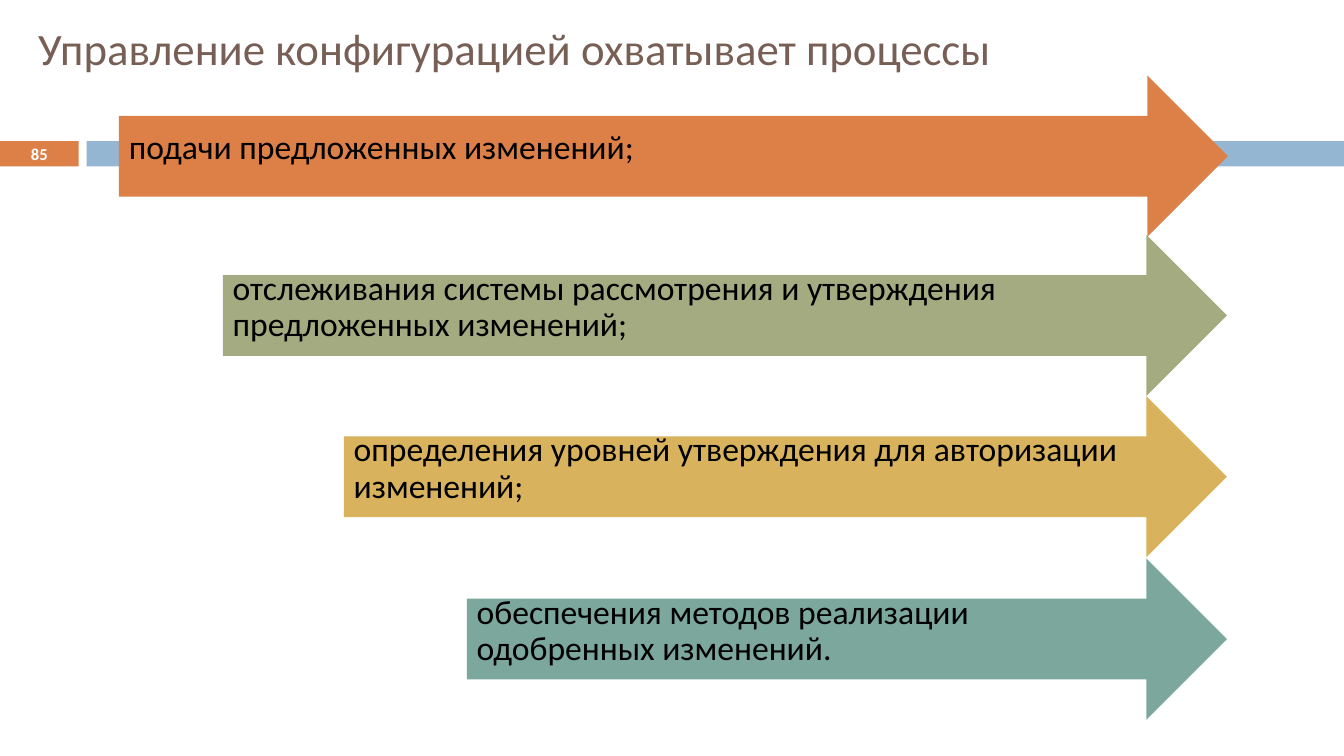
from pptx import Presentation
from pptx.dml.color import RGBColor
from pptx.enum import shapes, text
from pptx.util import Inches, Pt

COLORS = {
    "orange": "DD8047", "blue": "94B6D2", "green": "A5AB81", "gold": "D8B25C",
    "teal": "7BA79D", "title": "775F55", "black": "000000", "white": "FFFFFF",
}
TITLE = "Управление конфигурацией охватывает процессы"
PAGE_NUMBER = "85"
BARS = [(0, 0.78, "orange"), (0.86, 12.47, "blue")]
PROCESSES = [
    ("подачи предложенных изменений;", "orange", 1.18, 0.75, 11, 10.6),
    ("отслеживания системы рассмотрения и утверждения предложенных изменений;",
     "green", 2.21, 2.33, 9.96, 9.49),
    ("определения уровней утверждения для авторизации изменений;",
     "gold", 3.41, 3.93, 8.76, 8.17),
    ("обеспечения методов реализации одобренных изменений.",
     "teal", 4.63, 5.54, 7.54, 6.65),
]
ARROW_HEIGHT = 1.6
SHAFT_HEIGHT = ARROW_HEIGHT / 2
LABEL_INSETS = (0.1, 0.1, 0.28, 0.25)


def add_filled(slide, kind, box, color):
    shape = slide.shapes.add_shape(kind, *map(Inches, box))
    shape.shadow.inherit = False
    shape.fill.solid()
    shape.fill.fore_color.rgb = RGBColor.from_string(COLORS[color])
    shape.line.fill.background()
    return shape


def add_text(slide, content, box, size, color, bold=False,
             align=text.PP_ALIGN.LEFT, insets=(0.1, 0.05, 0.1, 0.05), spacing=1.0):
    frame = slide.shapes.add_textbox(*map(Inches, box)).text_frame
    frame.word_wrap = True
    frame.vertical_anchor = text.MSO_ANCHOR.MIDDLE
    (frame.margin_left, frame.margin_top,
     frame.margin_right, frame.margin_bottom) = map(Inches, insets)
    paragraph = frame.paragraphs[0]
    paragraph.text = content
    paragraph.alignment = align
    paragraph.line_spacing = spacing
    paragraph.font.name = "Calibri"
    paragraph.font.size = Pt(size)
    paragraph.font.bold = bold
    paragraph.font.color.rgb = RGBColor.from_string(COLORS[color])


def main():
    presentation = Presentation()
    presentation.slide_width = Inches(13.33)
    presentation.slide_height = Inches(7.5)
    slide = presentation.slides.add_slide(presentation.slide_layouts[6])

    for left, width, color in BARS:
        add_filled(slide, shapes.MSO_SHAPE.RECTANGLE, (left, 1.4, width, 0.25), color)
    add_text(slide, TITLE, (0.28, 0.13, 12.97, 0.69), 32, "title")
    add_text(slide, PAGE_NUMBER, (0, 1.39, 0.78, 0.27), 11.9, "white",
             bold=True, align=text.PP_ALIGN.CENTER)

    for label, color, left, top, width, label_width in PROCESSES:
        arrow = add_filled(slide, shapes.MSO_SHAPE.RIGHT_ARROW,
                           (left, top, width, ARROW_HEIGHT), color)
        arrow.adjustments[0] = arrow.adjustments[1] = 0.5
        label_top = top + (ARROW_HEIGHT - SHAFT_HEIGHT) / 2
        add_text(slide, label, (left, label_top, label_width, SHAFT_HEIGHT), 24,
                 "black", insets=LABEL_INSETS, spacing=0.9)

    presentation.save("out.pptx")


if __name__ == "__main__":
    main()
